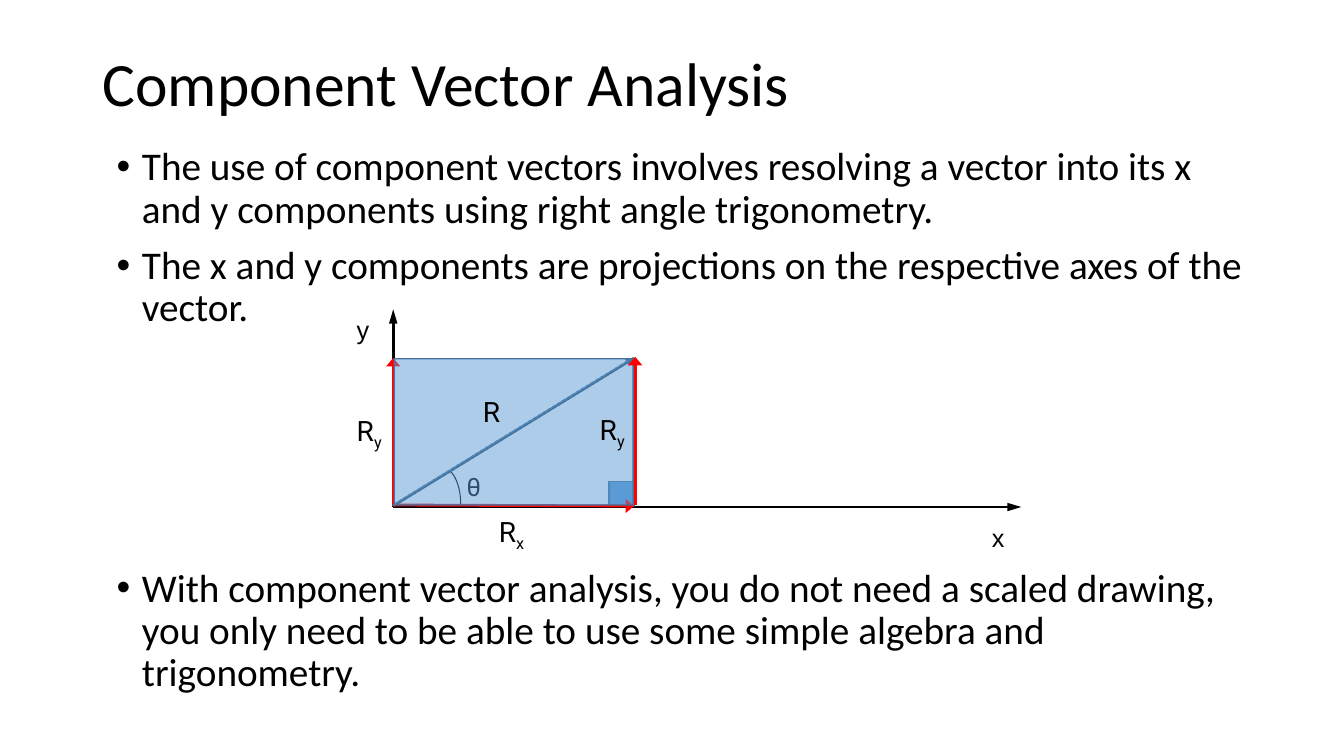
import pptx
import pptx.dml.color
import pptx.enum.dml
import pptx.enum.shapes
import pptx.enum.text
import pptx.oxml.ns
import pptx.util
import lxml.etree

Inches = pptx.util.Inches
Pt = pptx.util.Pt
qn = pptx.oxml.ns.qn
MSO_SHAPE = pptx.enum.shapes.MSO_SHAPE

COLORS = {name: pptx.dml.color.RGBColor.from_string(value) for name, value in {
    "black": "000000", "red": "FF0000", "slate": "44546A",
    "blue": "5B9BD5", "edge": "43739E",
}.items()}

deck = pptx.Presentation()
deck.slide_width = Inches(13.33)
deck.slide_height = Inches(7.5)
page = deck.slides.add_slide(deck.slide_layouts[6])


def add_text(text, *, left, top, width, height, size, font, subscript="",
             wrap=False, anchor="TOP", spacing=1.0, bullet_gaps=None):
    box = page.shapes.add_textbox(Inches(left), Inches(top), Inches(width), Inches(height))
    frame = box.text_frame
    frame.word_wrap = wrap
    frame.vertical_anchor = pptx.enum.text.MSO_ANCHOR[anchor]
    for index, line in enumerate(text.split("\n")):
        para = frame.paragraphs[0] if index == 0 else frame.add_paragraph()
        para.line_spacing = spacing
        if bullet_gaps:
            para.space_before = Pt(bullet_gaps[index])
            properties = para._p.get_or_add_pPr()
            properties.set("marL", str(Inches(0.25)))
            properties.set("indent", str(Inches(-0.25)))
            lxml.etree.SubElement(properties, qn("a:buFont")).set("typeface", "Arial")
            lxml.etree.SubElement(properties, qn("a:buChar")).set("char", "•")
        for part in filter(None, (line, subscript)):
            span = para.add_run()
            span.text = part
            span.font.size = Pt(size)
            span.font.name = font
            span.font.color.rgb = COLORS["black"]
            if part == subscript:
                span.font._element.set("baseline", "-25000")


def add_arrow(start, end, color, head_width="med", head_length="med", dash=None):
    arrow = page.shapes.add_connector(
        pptx.enum.shapes.MSO_CONNECTOR.STRAIGHT, *map(Inches, start + end))
    arrow.line.color.rgb = COLORS[color]
    arrow.line.width = Pt(2)
    if dash:
        arrow.line.dash_style = dash
    head = lxml.etree.SubElement(arrow.line._get_or_add_ln(), qn("a:tailEnd"))
    head.set("type", "triangle")
    head.set("w", head_width)
    head.set("len", head_length)
    lxml.etree.SubElement(arrow._element.spPr, qn("a:effectLst"))


add_text("Component Vector Analysis", left=0.92, top=0.13, width=11.5, height=1.45,
         size=44, font="Calibri", wrap=True, anchor="MIDDLE", spacing=0.9)
add_text("The use of component vectors involves resolving a vector into its x and y "
         "components using right angle trigonometry.\n"
         "The x and y components are projections on the respective axes of the vector.\n"
         "With component vector analysis, you do not need a scaled drawing, you only need "
         "to be able to use some simple algebra and trigonometry.",
         left=1.06, top=1.41, width=11.5, height=5.8, size=28, font="Calibri",
         wrap=True, spacing=0.9, bullet_gaps=(10, 10, 170))

for axis_end in ((10.13, 5.03), (3.9, 3.07)):
    add_arrow((3.9, 5.03), axis_end, "black", head_length="lg")
for axis, left, top in (("x", 9.74, 5.13), ("y", 3.44, 3.07)):
    add_text(axis, left=left, top=top, width=0.33, height=0.4, size=18, font="Arial")

add_arrow((3.9, 5.02), (3.9, 3.55), "red", head_width="lg")

right_angle = page.shapes.add_shape(
    MSO_SHAPE.RECTANGLE, Inches(6.04), Inches(4.78), Inches(0.25), Inches(0.24))
right_angle.shadow.inherit = False
right_angle.fill.solid()
right_angle.fill.fore_color.rgb = COLORS["blue"]
right_angle.line.color.rgb = COLORS["edge"]
right_angle.line.width = Pt(1)

add_arrow((3.9, 5.01), (6.29, 5.02), "red", head_width="lg")
add_arrow((3.91, 5.01), (6.29, 3.55), "slate",
          dash=pptx.enum.dml.MSO_LINE.ROUND_DOT)

arc_controls = ((4.46, 4.67), (4.53, 4.73), (4.57, 4.86), (4.57, 5.01))
arc_points = []
for step in range(17):
    t = step / 16
    weights = ((1 - t) ** 3, 3 * t * (1 - t) ** 2, 3 * t ** 2 * (1 - t), t ** 3)
    arc_points.append(tuple(
        Inches(sum(weight * point[axis] for weight, point in zip(weights, arc_controls)))
        for axis in (0, 1)))
builder = page.shapes.build_freeform(*arc_points[0])
builder.add_line_segments(arc_points[1:], close=False)
angle_arc = builder.convert_to_shape()
angle_arc.shadow.inherit = False
angle_arc.fill.background()
angle_arc.line.color.rgb = COLORS["black"]
angle_arc.line.width = Pt(0.75)
add_text("θ", left=4.53, top=4.63, width=0.33, height=0.4, size=18, font="Roboto")

for flip, left, top in (("flipH", 3.9, 3.55), ("flipV", 3.91, 3.56)):
    triangle = page.shapes.add_shape(
        MSO_SHAPE.RIGHT_TRIANGLE, Inches(left), Inches(top), Inches(2.38), Inches(1.46))
    triangle._element.spPr.xfrm.set(flip, "1")
    triangle.shadow.inherit = False
    triangle.fill.solid()
    triangle.fill.fore_color.rgb = COLORS["blue"]
    color = triangle._element.spPr.find(qn("a:solidFill"))[0]
    lxml.etree.SubElement(color, qn("a:alpha")).set("val", "50000")
    triangle.line.color.rgb = COLORS["edge"]
    triangle.line.width = Pt(1)

add_arrow((6.3, 5.01), (6.3, 3.54), "red", head_width="lg")

for subscript, left, top, width in (
        ("y", 3.44, 4.05, 0.46), ("x", 4.85, 5.06, 0.46),
        ("", 4.69, 3.86, 0.38), ("y", 5.85, 4.04, 0.46)):
    add_text("R", subscript=subscript, left=left, top=top, width=width, height=0.43,
             size=20, font="Roboto")

deck.save("out.pptx")
